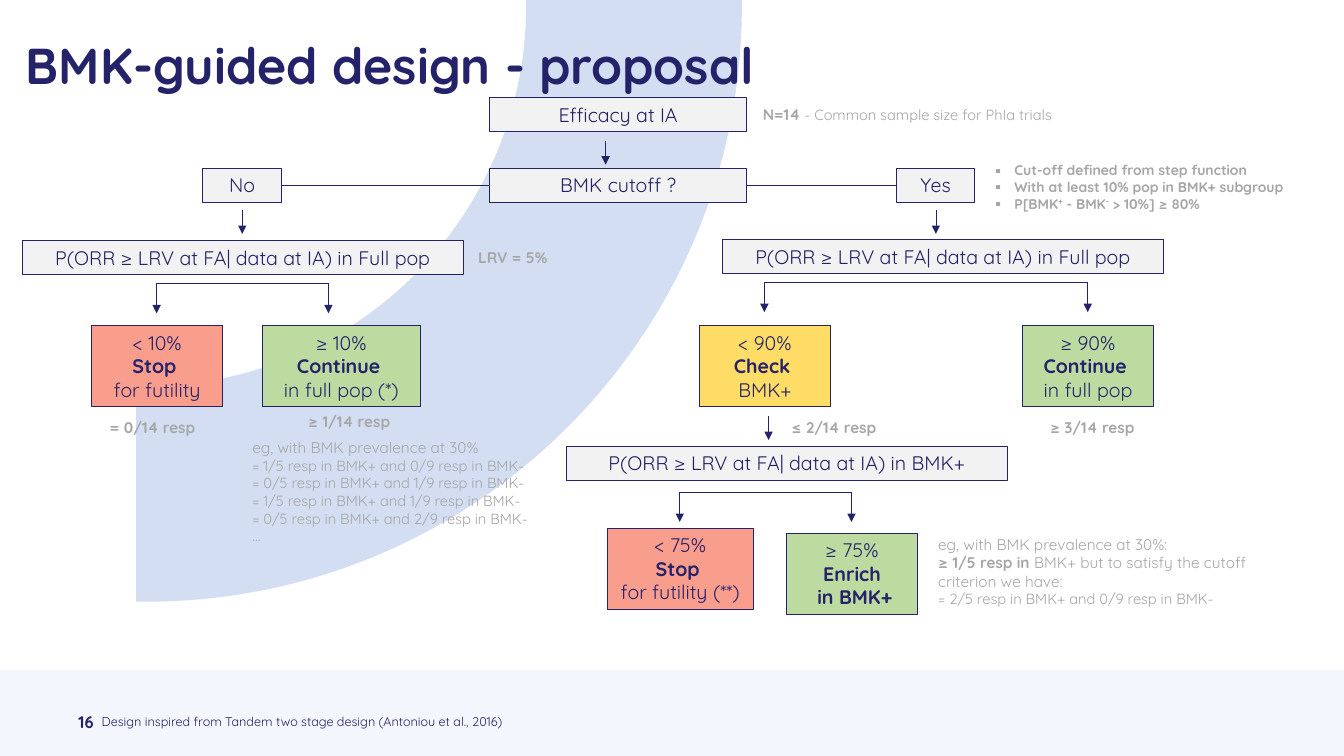
from lxml.etree import SubElement
from pptx import Presentation
from pptx.dml.color import RGBColor
from pptx.enum.shapes import MSO_CONNECTOR, MSO_SHAPE
from pptx.enum.text import MSO_ANCHOR, MSO_AUTO_SIZE, PP_ALIGN
from pptx.oxml.ns import qn
from pptx.util import Pt

FONT = "Quicksand"
COLORS = {
    "navy": "242269", "grey": "A6A6A6", "box": "F2F2F2", "arc": "D3DEF2",
    "footer": "F3F7FD", "red": "F99D8D", "green": "BDDBA0", "yellow": "FFDC65",
}
BOX_HEIGHT = 24.2
OUTCOME_HEIGHT = 58.2
TOP_ROW = 120.3
OUTCOME_ROW = 232.5
LABEL_ROW = 294.8


def rgb(name):
    return RGBColor.from_string(COLORS[name])


def add_run(paragraph, text, size, color, bold, baseline=0):
    """Add text to a paragraph, turning newlines into line breaks."""
    for number, line in enumerate(text.split("\n")):
        if number:
            paragraph.add_line_break()
        if not line:
            continue
        run = paragraph.add_run()
        run.text = line
        run.font.name, run.font.size, run.font.bold = FONT, Pt(size), bold
        run.font.color.rgb = rgb(color)
        if baseline:
            run.font._element.set("baseline", str(baseline))


def write(frame, paragraphs, size=11, color="grey", bold=False, align=PP_ALIGN.LEFT,
          anchor=MSO_ANCHOR.TOP, inset=True, bullet=None, leading=None):
    """Fill a frame; a paragraph is a string or a list of (text, overrides)."""
    frame.word_wrap = True
    frame.auto_size = MSO_AUTO_SIZE.NONE
    frame.vertical_anchor = anchor
    frame.margin_left = frame.margin_right = Pt(7.2 if inset else 0)
    frame.margin_top = frame.margin_bottom = Pt(3.6 if inset else 0)
    for number, content in enumerate(paragraphs):
        paragraph = frame.add_paragraph() if number else frame.paragraphs[0]
        paragraph.alignment = align
        if leading:
            paragraph.line_spacing = Pt(leading)
        if bullet:
            properties = paragraph._p.get_or_add_pPr()
            properties.set("marL", str(Pt(13.5)))
            properties.set("indent", str(Pt(-13.5)))
            SubElement(properties, qn("a:buFont"), typeface=FONT)
            SubElement(properties, qn("a:buChar"), char=bullet)
        runs = [(content, {})] if isinstance(content, str) else content
        for text, changes in runs:
            add_run(paragraph, text, **{"size": size, "color": color, "bold": bold, **changes})


def add_note(slide, left, top, width, height, paragraphs, **text_format):
    note = slide.shapes.add_textbox(Pt(left), Pt(top), Pt(width), Pt(height))
    write(note.text_frame, paragraphs, **text_format)


def paint(shape, fill, outline=None):
    shape.shadow.inherit = False
    shape.fill.solid()
    shape.fill.fore_color.rgb = rgb(fill)
    if outline:
        shape.line.color.rgb = rgb(outline)
        shape.line.width = Pt(0.75)
    else:
        shape.line.fill.background()


def add_box(slide, left, top, width, paragraphs, height=BOX_HEIGHT, fill="box"):
    box = slide.shapes.add_shape(MSO_SHAPE.RECTANGLE, Pt(left), Pt(top), Pt(width), Pt(height))
    paint(box, fill, "navy")
    write(box.text_frame, paragraphs, size=14, color="navy", align=PP_ALIGN.CENTER)
    return box


def add_outcome(slide, left, top, width, fill, condition, verdict, detail, bold_detail=False):
    action = [(verdict + "\n", {"bold": True}), (detail, {"bold": bold_detail})]
    add_box(slide, left, top, width, [condition, action], OUTCOME_HEIGHT, fill)


def add_line(slide, x1, y1, x2, y2, arrow=False):
    line = slide.shapes.add_connector(MSO_CONNECTOR.STRAIGHT, Pt(x1), Pt(y1), Pt(x2), Pt(y2))
    line.line.color.rgb = rgb("navy")
    line.line.width = Pt(0.5)
    if arrow:
        SubElement(line.line._get_or_add_ln(), qn("a:tailEnd"), type="triangle")
    SubElement(line._element.spPr, qn("a:effectLst"))
    return line


def add_fork(slide, left, right, top, drop=21.3):
    add_line(slide, left, top, right, top)
    for x in (left, right):
        add_line(slide, x, top, x, top + drop, arrow=True)


def bend(segment, origin, controls):
    """Turn a straight freeform segment into a cubic curve with two controls."""
    segment.tag = qn("a:cubicBezTo")
    for position, (x, y) in enumerate(controls):
        point = segment.makeelement(qn("a:pt"), x=str(Pt(x - origin[0])), y=str(Pt(y - origin[1])))
        segment.insert(position, point)


def add_background(slide):
    # Quarter ring with an outer and an inner curve
    corners = [(529.9, 0), (529.9, 4.3), (104.4, 429.8), (97.2, 429.8),
               (97.2, 275.8), (104.4, 275.8), (375.8, 4.3)]
    builder = slide.shapes.build_freeform(Pt(375.8), 0)
    builder.add_line_segments([(Pt(x), Pt(y)) for x, y in corners], close=True)
    ring = builder.convert_to_shape()
    segments = list(ring._element.iter(qn("a:lnTo")))
    bend(segments[2], (97.2, 0), [(529.9, 239.8), (339.1, 429.8)])
    bend(segments[6], (97.2, 0), [(254.2, 275.8), (375.8, 154.1)])
    paint(ring, "arc")

    # Footer strip
    footer = slide.shapes.add_shape(MSO_SHAPE.RECTANGLE, 0, Pt(478.6), Pt(960), Pt(61.4))
    paint(footer, "footer")


def add_title(slide, text):
    title = slide.shapes.title
    title.element.getparent().append(title.element)
    title.left, title.top, title.width, title.height = Pt(18.5), Pt(15.3), Pt(825), Pt(174.2)
    write(title.text_frame, [text], size=36, color="navy", bold=True, inset=False, leading=52)


def add_decisions(slide):
    # The line between No and Yes runs behind the cutoff question
    no = add_box(slide, 144.8, TOP_ROW, 56.3, ["No"])
    yes = add_box(slide, 640.2, TOP_ROW, 56.2, ["Yes"])
    split = add_line(slide, 201, TOP_ROW, 640, TOP_ROW)
    split.begin_connect(no, 3)
    split.end_connect(yes, 1)
    add_box(slide, 349.7, 69.8, 183.7, ["Efficacy at IA"])
    add_box(slide, 349.7, TOP_ROW, 183.7, ["BMK cutoff ?"])

    # Probability questions
    question = "P(ORR ≥ LRV at FA| data at IA) in "
    for left, top, population in ((16, 171.9, "Full pop"), (516.1, 171.2, "Full pop"),
                                  (404.6, 318.9, "BMK+")):
        add_box(slide, left, top, 315, [question + population])

    # Arrows and forks
    for x, top in ((432.6, 100.8), (173, 150.3), (668.5, 150.3), (549, 297.5)):
        add_line(slide, x, top, x, top + 16.75, arrow=True)
    for left, right, top in ((111.9, 234.6, 202.5), (546, 777, 201.6), (485.6, 608.2, 351.5)):
        add_fork(slide, left, right, top)


def add_outcomes(slide):
    add_outcome(slide, 65.4, OUTCOME_ROW, 93.8, "red", "< 10%", "Stop ", "for futility")
    add_outcome(slide, 187.4, OUTCOME_ROW, 113, "green", "≥ 10%", "Continue ", "in full pop (*)")
    add_outcome(slide, 499.5, OUTCOME_ROW, 93.8, "yellow", "< 90%", "Check ", "BMK+")
    add_outcome(slide, 730.3, OUTCOME_ROW, 93.8, "green", "≥ 90%", "Continue ", "in full pop")
    add_outcome(slide, 433.7, 377.2, 104.6, "red", "< 75%", "Stop ", "for futility (**)")
    add_outcome(slide, 561.7, 380.8, 93.8, "green", "≥ 75%", "Enrich", " in BMK+", bold_detail=True)


def add_notes(slide):
    # Response counts under the outcomes
    for left, top, width, count in ((52.6, LABEL_ROW, 113, "= 0/14 resp"),
                                    (182.2, 291, 134.6, "≥ 1/14 resp"),
                                    (551.5, LABEL_ROW, 88.6, "≤ 2/14 resp"),
                                    (723.8, LABEL_ROW, 113, "≥ 3/14 resp")):
        add_note(slide, left, top, width, 20.6, [count], bold=True, align=PP_ALIGN.CENTER)

    # Assumptions
    add_note(slide, 537.8, 71.7, 254.9, 20.6, [[
        ("N=14 ", {"bold": True}), ("- Common sample size for PhIa trials", {"size": 10.5})]])
    add_note(slide, 334.5, 173.5, 113, 20.6, ["LRV = 5%"], bold=True)
    raised = {"baseline": 30000}
    add_note(slide, 704, 111.8, 230.4, 43.9, [
        "Cut-off defined from step function",
        "With at least 10% pop in BMK+ subgroup",
        [("P[BMK", {}), ("+", raised), (" - BMK", {}), ("-", raised), (" > 10%] ≥ 80%", {})],
    ], size=10, bold=True, bullet="▪")

    # Worked examples
    first, second, third, fourth = [
        f"= {plus}/5 resp in BMK+ and {minus}/9 resp in BMK-"
        for plus, minus in ((1, 0), (0, 1), (1, 1), (0, 2))]
    add_note(slide, 173.2, 309.5, 239.8, 110.9, [
        [("eg, with BMK prevalence at 30%", {"size": 11})],
        "\n".join((first, second, third)), fourth, "…"], size=10.5)
    add_note(slide, 663.1, 378.5, 239.8, 59.8, [
        "eg, with BMK prevalence at 30%:",
        [("≥ 1/5 resp in ", {"bold": True}),
         ("BMK+ but to satisfy the cutoff criterion we have:", {})],
        [("= 2/5 resp in BMK+ and 0/9 resp in BMK-", {"size": 10.5})]])

    # Footer
    add_note(slide, 56, 501, 32.4, 28.8, ["16"], size=12, color="navy", bold=True,
             anchor=MSO_ANCHOR.MIDDLE, inset=False)
    add_note(slide, 65.5, 506.7, 363.6, 18,
             ["Design inspired from Tandem two stage design (Antoniou et al., 2016)"],
             size=9, color="navy")


def main():
    deck = Presentation()
    deck.slide_width, deck.slide_height = Pt(960), Pt(540)
    slide = deck.slides.add_slide(deck.slide_layouts[5])
    add_background(slide)
    add_title(slide, "BMK-guided design - proposal")
    add_decisions(slide)
    add_outcomes(slide)
    add_notes(slide)
    deck.save("out.pptx")


if __name__ == "__main__":
    main()
